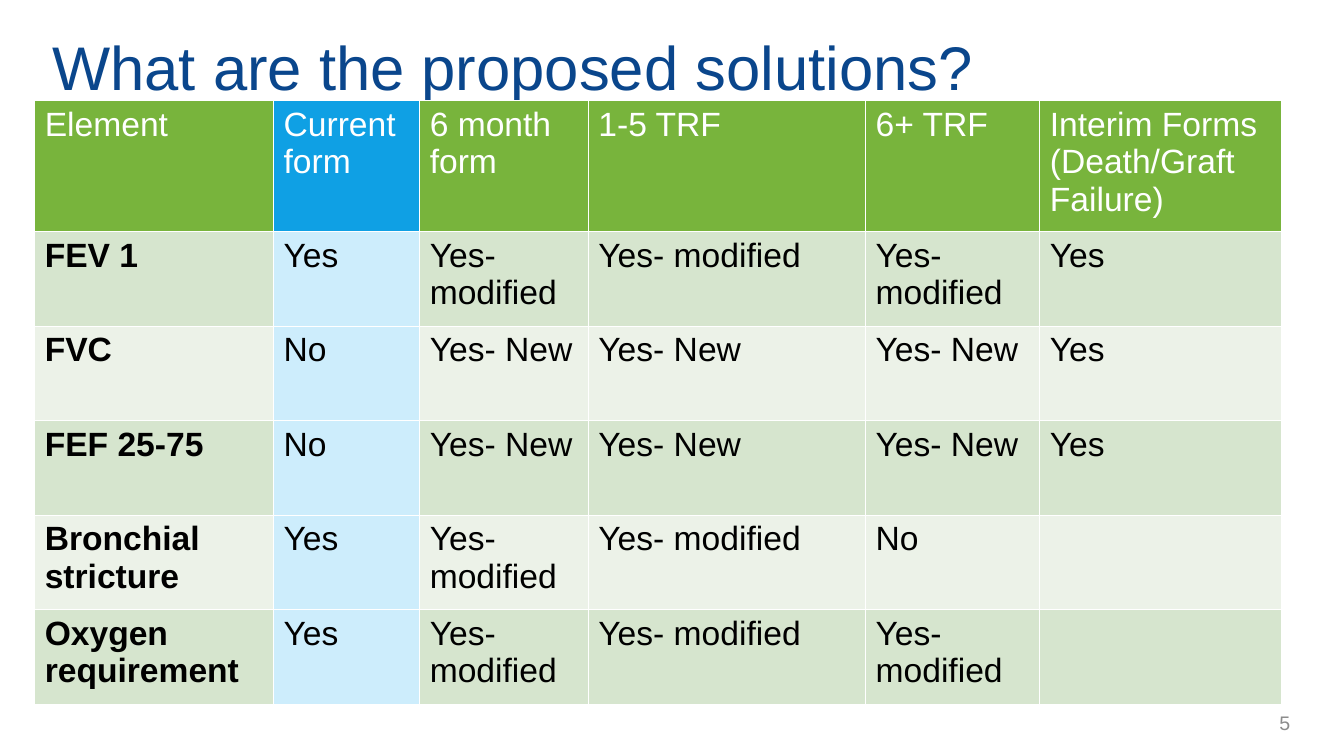
from pptx import Presentation
from pptx.dml.color import RGBColor
from pptx.enum.text import MSO_ANCHOR, MSO_AUTO_SIZE, PP_ALIGN
from pptx.util import Pt


def color(hex_value):
    return RGBColor.from_string(hex_value)


def write(frame, text, size=24, ink="000000", bold=False, align=PP_ALIGN.LEFT):
    paragraph = frame.paragraphs[0]
    paragraph.alignment = align
    paragraph.font.size = Pt(size)
    run = paragraph.add_run()
    run.text = text
    run.font.name = "Arial"
    run.font.size = Pt(size)
    run.font.bold = bold
    run.font.color.rgb = color(ink)


deck = Presentation()
deck.slide_width = Pt(960)
deck.slide_height = Pt(540)
slide = deck.slides.add_slide(deck.slide_layouts[5])

question = slide.shapes.title
question.left, question.top, question.width, question.height = Pt(30.2), Pt(13.7), Pt(917.3), Pt(67)
question.text_frame.vertical_anchor = MSO_ANCHOR.MIDDLE
question.text_frame.word_wrap = True
question.text_frame.auto_size = MSO_AUTO_SIZE.NONE
write(question.text_frame, "What are the proposed solutions?", size=44, ink="0A468C")

page_number = slide.shapes.add_textbox(Pt(766), Pt(501.8), Pt(162.7), Pt(28.8))
page_number.text_frame.word_wrap = True
page_number.text_frame.vertical_anchor = MSO_ANCHOR.MIDDLE
write(page_number.text_frame, "5", size=14, ink="8C8C8C", align=PP_ALIGN.RIGHT)

solutions = [
    ["Element", "Current form", "6 month form", "1-5 TRF", "6+ TRF", "Interim Forms (Death/Graft Failure)"],
    ["FEV 1", "Yes", "Yes-modified", "Yes- modified", "Yes-modified", "Yes"],
    ["FVC", "No", "Yes- New", "Yes- New", "Yes- New", "Yes"],
    ["FEF 25-75", "No", "Yes- New", "Yes- New", "Yes- New", "Yes"],
    ["Bronchial stricture", "Yes", "Yes-modified", "Yes- modified", "No", ""],
    ["Oxygen requirement", "Yes", "Yes-modified", "Yes- modified", "Yes-modified", ""],
]
column_widths = [170.6, 104.4, 120.5, 198, 124.5, 172.8]
row_heights = [87.4] + [67.5] * 5
current_form = 1

grid = slide.shapes.add_table(
    len(solutions), len(column_widths), Pt(24.8), Pt(72), Pt(sum(column_widths)), Pt(sum(row_heights))
).table
for column, width in zip(grid.columns, column_widths):
    column.width = Pt(width)
for row, height in zip(grid.rows, row_heights):
    row.height = Pt(height)

for r, entries in enumerate(solutions):
    header = r == 0
    if header:
        band, highlight = "78B43C", "0FA0E4"
    else:
        band, highlight = "D6E5CE" if r % 2 else "ECF2E8", "CDEDFC"
    for c, entry in enumerate(entries):
        cell = grid.cell(r, c)
        cell.fill.solid()
        cell.fill.fore_color.rgb = color(highlight if c == current_form else band)
        if entry:
            write(cell.text_frame, entry, ink="FFFFFF" if header else "000000", bold=c == 0 and not header)

deck.save("out.pptx")
